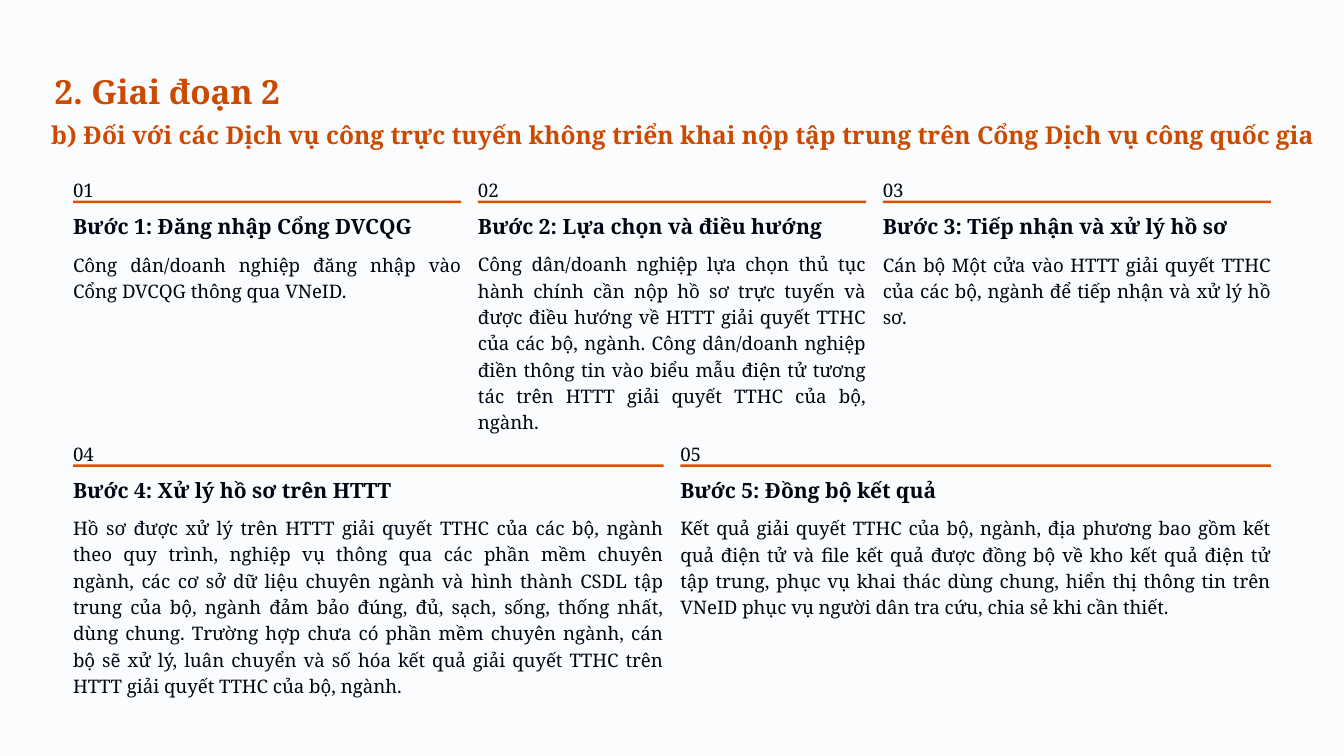
import pptx
import pptx.util
import pptx.dml.color
import pptx.enum.shapes
import pptx.enum.text
from dataclasses import dataclass

Pt = pptx.util.Pt
Align = pptx.enum.text.PP_ALIGN

FONT = "Noto Serif"
HUES = {"back": "FBFCFE", "title": "CC4900", "rule": "E04F00", "text": "010511"}
LEFT, SPAN, GAP = 62.64, 1026.72, 14.4
TOPS = (149.76, 375.84)
LINE = 22.8


@dataclass
class Style:
    size: float
    pitch: float
    hue: str = "text"
    bold: bool = False
    wrap: bool = False
    align: Align = Align.LEFT


@dataclass
class Step:
    num: str
    head: str
    wide: float
    body: str
    lines: int


TITLE = Style(28.5, 35.5, "title", True)
SUB = Style(21, 26.5, "title", True)
NUM = Style(16, 22.5)
HEAD = Style(18, 22, bold=True)
BODY = Style(16, 22.5, wrap=True, align=Align.JUSTIFY)

ROWS = (
    (
        Step("01", "Bước 1: Đăng nhập Cổng DVCQG", 264,
             "Công dân/doanh nghiệp đăng nhập vào Cổng DVCQG thông qua VNeID.", 2),
        Step("02", "Bước 2: Lựa chọn và điều hướng", 268,
             "Công dân/doanh nghiệp lựa chọn thủ tục hành chính cần nộp hồ sơ "
             "trực tuyến và được điều hướng về HTTT giải quyết TTHC của các bộ, "
             "ngành. Công dân/doanh nghiệp điền thông tin vào biểu mẫu điện tử "
             "tương tác trên HTTT giải quyết TTHC của bộ, ngành.", 6),
        Step("03", "Bước 3: Tiếp nhận và xử lý hồ sơ", 271,
             "Cán bộ Một cửa vào HTTT giải quyết TTHC của các bộ, ngành để "
             "tiếp nhận và xử lý hồ sơ.", 2),
    ),
    (
        Step("04", "Bước 4: Xử lý hồ sơ trên HTTT", 253,
             "Hồ sơ được xử lý trên HTTT giải quyết TTHC của các bộ, ngành theo "
             "quy trình, nghiệp vụ thông qua các phần mềm chuyên ngành, các cơ sở "
             "dữ liệu chuyên ngành và hình thành CSDL tập trung của bộ, ngành đảm "
             "bảo đúng, đủ, sạch, sống, thống nhất, dùng chung. Trường hợp chưa có "
             "phần mềm chuyên ngành, cán bộ sẽ xử lý, luân chuyển và số hóa kết quả "
             "giải quyết TTHC trên HTTT giải quyết TTHC của bộ, ngành.", 6),
        Step("05", "Bước 5: Đồng bộ kết quả", 199,
             "Kết quả giải quyết TTHC của bộ, ngành, địa phương bao gồm kết quả "
             "điện tử và file kết quả được đồng bộ về kho kết quả điện tử tập "
             "trung, phục vụ khai thác dùng chung, hiển thị thông tin trên VNeID "
             "phục vụ người dân tra cứu, chia sẻ khi cần thiết.", 4),
    ),
)


def shade(name: str) -> pptx.dml.color.RGBColor:
    return pptx.dml.color.RGBColor.from_string(HUES[name])


def fill_text(shape, text: str, style: Style) -> None:
    frame = shape.text_frame
    frame.text = text
    frame.word_wrap = style.wrap
    frame.auto_size = pptx.enum.text.MSO_AUTO_SIZE.NONE
    frame.vertical_anchor = pptx.enum.text.MSO_ANCHOR.TOP
    frame.margin_left = frame.margin_right = 0
    frame.margin_top = frame.margin_bottom = 0
    para = frame.paragraphs[0]
    para.alignment = style.align
    para.line_spacing = Pt(style.pitch)
    font = para.runs[0].font
    font.name, font.size, font.bold = FONT, Pt(style.size), style.bold
    font.color.rgb = shade(style.hue)


def add_text(slide, x: float, y: float, wide: float, high: float,
             text: str, style: Style) -> None:
    box = slide.shapes.add_textbox(Pt(x), Pt(y), Pt(wide), Pt(high))
    fill_text(box, text, style)


def add_rule(slide, x: float, y: float, wide: float) -> None:
    rule = slide.shapes.add_shape(pptx.enum.shapes.MSO_SHAPE.RECTANGLE,
                                  Pt(x), Pt(y), Pt(wide), Pt(2.16))
    rule.shadow.inherit = False
    rule.fill.solid()
    rule.fill.fore_color.rgb = shade("rule")
    rule.line.fill.background()


def add_step(slide, step: Step, x: float, y: float, wide: float) -> None:
    add_text(slide, x, y, 14.4, 18, step.num, NUM)
    add_rule(slide, x, y + 22.32, wide)
    add_text(slide, x, y + 33.12, step.wide, 22.32, step.head, HEAD)
    add_text(slide, x, y + 64.08, wide, LINE * step.lines, step.body, BODY)


def main() -> None:
    deck = pptx.Presentation()
    deck.slide_width, deck.slide_height = Pt(1152), Pt(648)
    slide = deck.slides.add_slide(deck.slide_layouts.get_by_name("Title Only"))
    slide.background.fill.solid()
    slide.background.fill.fore_color.rgb = shade("back")

    title = slide.shapes.title
    title.left, title.top = Pt(46.8), Pt(59.76)
    title.width, title.height = Pt(285.84), Pt(36)
    fill_text(title, "2. Giai đoạn 2", TITLE)
    add_text(slide, 43.92, 101.52, SPAN, 26.64,
             "b) Đối với các Dịch vụ công trực tuyến không triển khai nộp "
             "tập trung trên Cổng Dịch vụ công quốc gia", SUB)

    for top, row in zip(TOPS, ROWS):
        wide = (SPAN - GAP * (len(row) - 1)) / len(row)
        for col, step in enumerate(row):
            add_step(slide, step, LEFT + col * (wide + GAP), top, wide)
    deck.save("out.pptx")


if __name__ == "__main__":
    main()
